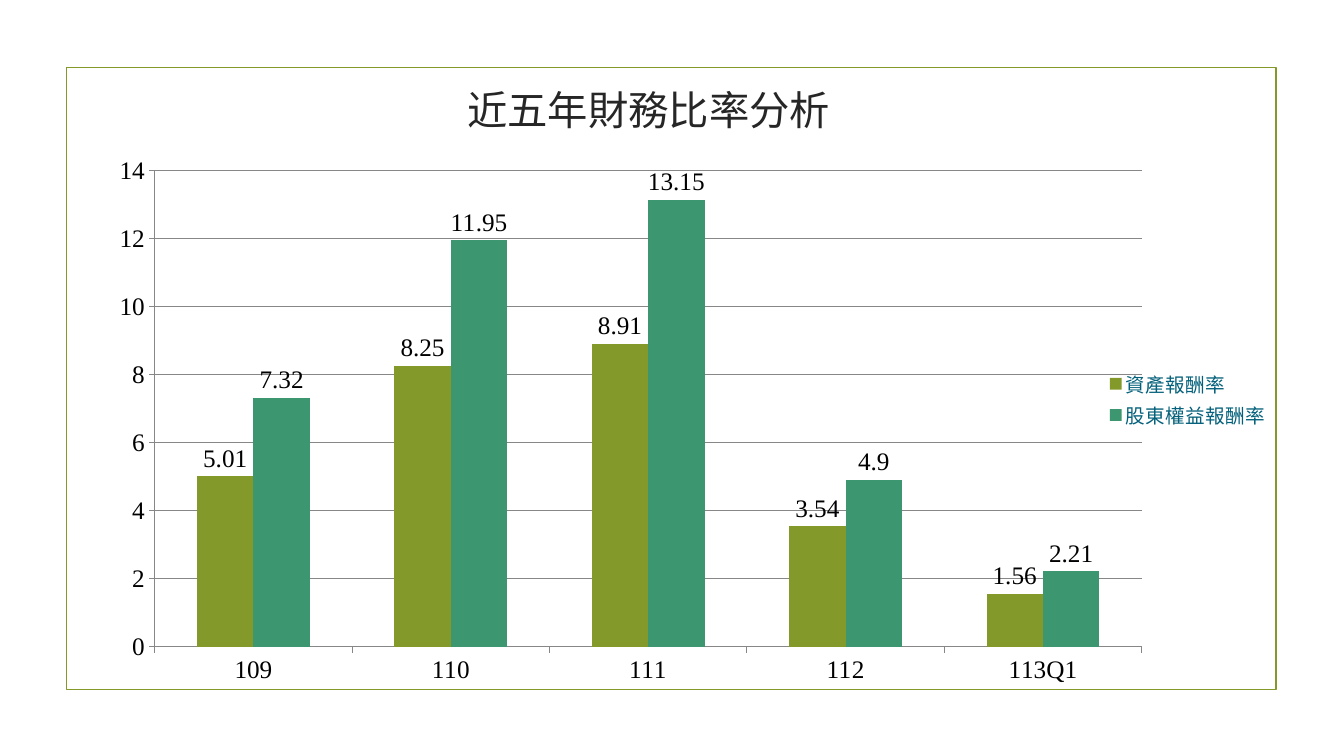
from lxml import etree
from pptx import Presentation
from pptx.chart.data import CategoryChartData
from pptx.dml.color import RGBColor
from pptx.enum import chart as charts, shapes, text
from pptx.oxml import parse_xml
from pptx.oxml.ns import nsdecls, qn
from pptx.util import Inches, Pt

OLIVE = RGBColor(0x83, 0x99, 0x2A)
GREEN = RGBColor(0x3C, 0x97, 0x70)
TEAL = RGBColor(0x04, 0x61, 0x7B)
DARK = RGBColor(0x26, 0x26, 0x26)
BLACK = RGBColor(0, 0, 0)
GRAY = RGBColor(0x87, 0x87, 0x87)
CJK_FONT = "Noto Sans CJK SC"
LATIN_FONT = "Times New Roman"

YEARS = ["109", "110", "111", "112", "113Q1"]
RATIOS = [
    ("資產報酬率", OLIVE, (5.01, 8.25, 8.91, 3.54, 1.56)),
    ("股東權益報酬率", GREEN, (7.32, 11.95, 13.15, 4.9, 2.21)),
]


def style_font(font, name, size, color):
    font.name = name
    font.size = Pt(size)
    font.color.rgb = color


def set_east_asian(properties, name):
    latin = properties.find(qn("a:latin"))
    east_asian = etree.Element(qn("a:ea"), typeface=name)
    latin.addnext(east_asian)


def add_frame(slide):
    frame = slide.shapes.add_shape(
        shapes.MSO_SHAPE.RECTANGLE, Inches(0.66), Inches(0.67), Inches(12), Inches(6.17))
    frame.shadow.inherit = False
    frame.fill.background()
    frame.line.color.rgb = OLIVE
    frame.line.width = Pt(1.25)


def set_title(slide, wording):
    title = slide.shapes.title
    title.left, title.top = Inches(1.56), Inches(0.78)
    title.width, title.height = Inches(9.75), Inches(0.61)
    title.text_frame.text = wording
    title.text_frame.auto_size = text.MSO_AUTO_SIZE.NONE
    title.text_frame.vertical_anchor = text.MSO_ANCHOR.MIDDLE
    paragraph = title.text_frame.paragraphs[0]
    paragraph.alignment = text.PP_ALIGN.CENTER
    style_font(paragraph.font, CJK_FONT, 28.8, DARK)
    set_east_asian(paragraph._p.pPr.find(qn("a:defRPr")), CJK_FONT)


def place_manually(x, y, width, height, inner=False):
    """Layout element with position and size as fractions of the chart."""
    target = '<c:layoutTarget val="inner"/>' if inner else ""
    return parse_xml(
        f'<c:layout {nsdecls("c")}><c:manualLayout>{target}'
        '<c:xMode val="edge"/><c:yMode val="edge"/>'
        f'<c:x val="{x}"/><c:y val="{y}"/><c:w val="{width}"/><c:h val="{height}"/>'
        '</c:manualLayout></c:layout>')


def style_axis(axis):
    axis.major_tick_mark = charts.XL_TICK_MARK.OUTSIDE
    axis.minor_tick_mark = charts.XL_TICK_MARK.NONE
    axis.format.line.color.rgb = GRAY
    style_font(axis.tick_labels.font, LATIN_FONT, 18, BLACK)


def style_legend(chart):
    chart.has_legend = True
    legend = chart.legend
    legend.position = charts.XL_LEGEND_POSITION.RIGHT
    legend.include_in_layout = False
    style_font(legend.font, CJK_FONT, 14, TEAL)
    set_east_asian(legend._element.find(".//" + qn("a:defRPr")), CJK_FONT)
    for layout in legend._element.findall(qn("c:layout")):
        legend._element.remove(layout)
    legend._element.find(qn("c:legendPos")).addnext(
        place_manually(0.8, 0.4, 0.15, 0.12))


def add_ratio_chart(slide):
    data = CategoryChartData()
    data.categories = YEARS
    for name, _, values in RATIOS:
        data.add_series(name, values)
    chart = slide.shapes.add_chart(
        charts.XL_CHART_TYPE.COLUMN_CLUSTERED, Inches(0.94), Inches(1.46),
        Inches(12.39), Inches(5.44), data).chart
    chart.has_title = False
    style_font(chart.font, LATIN_FONT, 18, BLACK)

    # Axes and gridlines
    style_axis(chart.category_axis)
    style_axis(chart.value_axis)
    chart.value_axis.minimum_scale = 0
    chart.value_axis.maximum_scale = 14
    chart.value_axis.major_unit = 2
    chart.value_axis.major_gridlines.format.line.color.rgb = GRAY

    # Columns and their values
    plot = chart.plots[0]
    plot.gap_width = 150
    plot.overlap = 0
    plot.vary_by_categories = False
    for series, (_, color, _) in zip(plot.series, RATIOS):
        series.format.fill.solid()
        series.format.fill.fore_color.rgb = color
        labels = series.data_labels
        labels.show_value = True
        labels.position = charts.XL_LABEL_POSITION.OUTSIDE_END
        style_font(labels.font, LATIN_FONT, 18, BLACK)

    # Plot area and legend positions
    plot_area = chart._chartSpace.chart.plotArea
    for layout in plot_area.findall(qn("c:layout")):
        plot_area.remove(layout)
    plot_area.insert(0, place_manually(0.048, 0.043, 0.79, 0.868, inner=True))
    style_legend(chart)


def main():
    presentation = Presentation()
    presentation.slide_width = Inches(13.33)
    presentation.slide_height = Inches(7.5)
    slide = presentation.slides.add_slide(presentation.slide_layouts[5])
    add_frame(slide)
    set_title(slide, "近五年財務比率分析")
    add_ratio_chart(slide)
    presentation.save("out.pptx")


if __name__ == "__main__":
    main()
